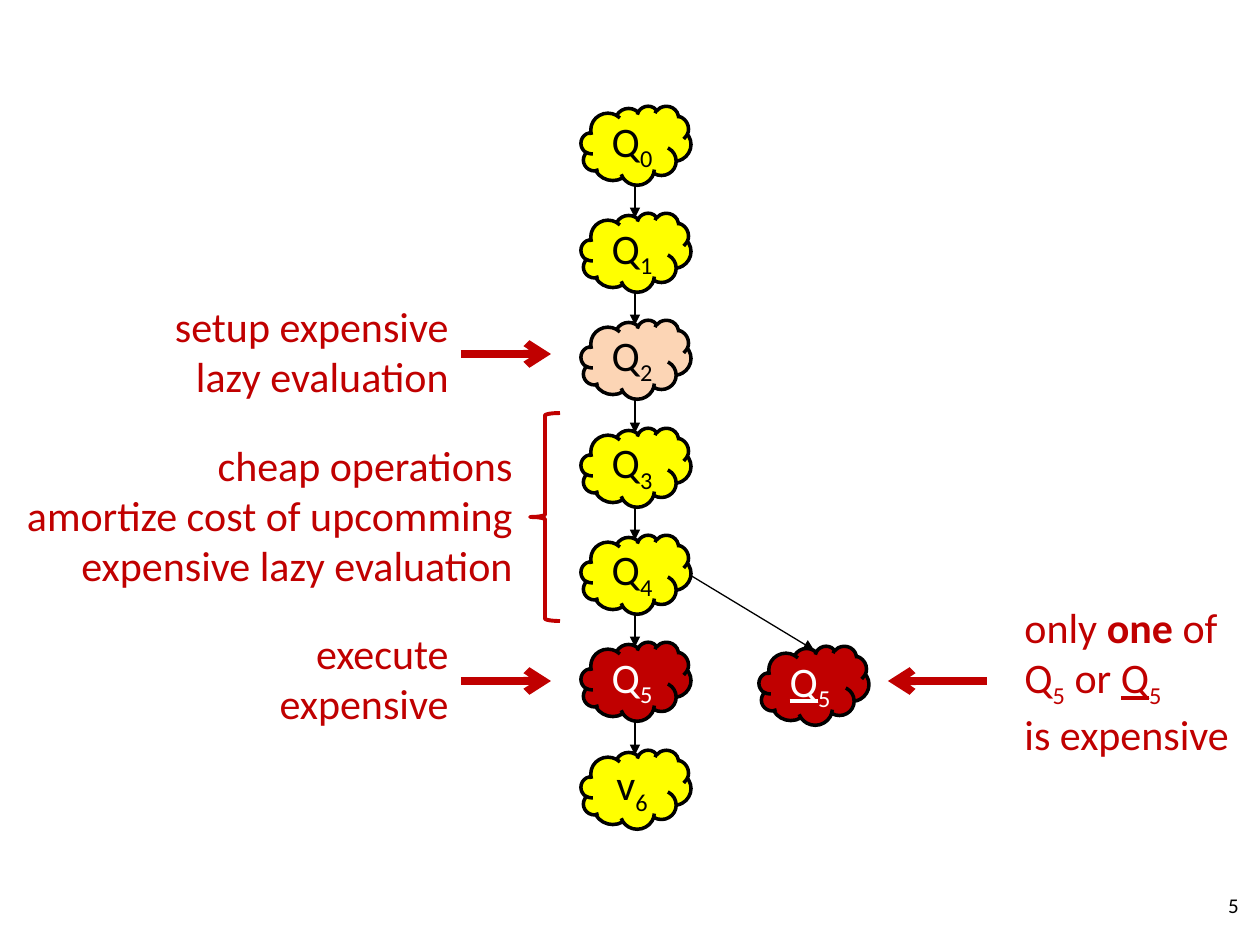
"""Build the slide on lazy evaluation in a chain of queues."""
from lxml import etree
from pptx import Presentation
from pptx.dml.color import RGBColor
from pptx.enum.shapes import MSO_CONNECTOR, MSO_SHAPE
from pptx.enum.text import MSO_ANCHOR, PP_ALIGN
from pptx.oxml.ns import qn
from pptx.util import Emu, Pt

LINE = MSO_CONNECTOR.STRAIGHT
CLOUD, BRACE = MSO_SHAPE.CLOUD, MSO_SHAPE.LEFT_BRACE
LEFT, MID, RIGHT = PP_ALIGN.LEFT, PP_ALIGN.CENTER, PP_ALIGN.RIGHT
CENTER = MSO_ANCHOR.MIDDLE
BLACK = RGBColor(0, 0, 0)
WHITE = RGBColor(255, 255, 255)
YELLOW = RGBColor(255, 255, 0)
PEACH = RGBColor(252, 213, 181)
RED = RGBColor(192, 0, 0)
SCALE = 914400 / 126
WIDE, HIGH = 110, 79


def px(*nums):
    return [Emu(round(n * SCALE)) for n in nums]


def write(frame, paras, align, color, size=24):
    frame.word_wrap = True
    for i, parts in enumerate(paras):
        para = frame.add_paragraph() if i else frame.paragraphs[0]
        para.alignment = align
        for text, style in parts:
            if text == "\n":
                para.add_line_break()
                continue
            run = para.add_run()
            run.text = text
            font = run.font
            font.name, font.size = "Calibri", Pt(size)
            font.color.rgb = color
            if style == "bold":
                font.bold = True
            elif style == "under":
                font.underline = True
            elif style == "sub":
                run._r.get_or_add_rPr().set("baseline", "-25000")


deck = Presentation()
deck.slide_width, deck.slide_height = px(1260, 945)
shapes = deck.slides.add_slide(deck.slide_layouts[6]).shapes

tops = [106 + i * 644 // 6 for i in range(7)]
fills = [YELLOW, YELLOW, PEACH, YELLOW, YELLOW, RED, YELLOW]
clouds = [(581, top, fill, "v" if i == 6 else "Q", str(i), "")
          for i, (top, fill) in enumerate(zip(tops, fills))]
clouds.append((759, 646, RED, "Q", "5", "under"))
for left, top, fill, name, sub, style in clouds:
    cloud = shapes.add_shape(CLOUD, *px(left, top, WIDE, HIGH))
    cloud.shadow.inherit = False
    cloud.fill.solid()
    cloud.fill.fore_color.rgb = fill
    cloud.line.color.rgb = BLACK
    cloud.line.width = Pt(2)
    cloud.text_frame.vertical_anchor = CENTER
    ink = WHITE if fill == RED else BLACK
    write(cloud.text_frame, [[(name, style), (sub, "sub")]], MID, ink)

thin = (BLACK, 0.75, "triangle")
thick = (RED, 4.5, "arrow")
arrows = [(635, top + HIGH, 635, below + 5, thin)
          for top, below in zip(tops, tops[1:])]
arrows += [
    (690, 575, 814, 650, thin),
    (461, 354, 551, 354, thick),
    (461, 681, 551, 681, thick),
    (987, 681, 888, 681, thick),
]
for x1, y1, x2, y2, (color, width, head) in arrows:
    arrow = shapes.add_connector(LINE, *px(x1, y1, x2, y2))
    arrow.line.color.rgb = color
    arrow.line.width = Pt(width)
    props = arrow.line._get_or_add_ln()
    etree.SubElement(props, qn("a:tailEnd"), type=head)
    etree.SubElement(arrow._element.spPr, qn("a:effectLst"))

brace = shapes.add_shape(BRACE, *px(530, 413, 30, 208))
brace.shadow.inherit = False
brace.fill.background()
brace.line.color.rgb = RED
brace.line.width = Pt(2.25)

setup = [[("setup expensive", ""), ("\n", ""), ("lazy evaluation", "")]]
cheap = [[("cheap operations", "")],
         [("amortize cost of upcomming expensive lazy evaluation", "")]]
run_it = [[("execute expensive", "")]]
only = [[("only ", ""), ("one", "bold"), (" of", ""), ("\n", ""),
         ("Q", ""), ("5", "sub"), (" or ", ""), ("Q", "under"),
         ("5", "sub"), ("\n", ""), ("is expensive", "")]]
labels = [
    (0, 294, 461, 115, setup, RIGHT),
    (0, 433, 525, 165, cheap, RIGHT),
    (154, 621, 307, 115, run_it, RIGHT),
    (1012, 595, 273, 165, only, LEFT),
]
for left, top, width, height, paras, align in labels:
    box = shapes.add_textbox(*px(left, top, width, height))
    write(box.text_frame, paras, align, RED)

number = shapes.add_textbox(*px(957, 880, 294, 50))
number.text_frame.vertical_anchor = CENTER
write(number.text_frame, [[("5", "")]], RIGHT, BLACK, 12)

deck.save("out.pptx")
